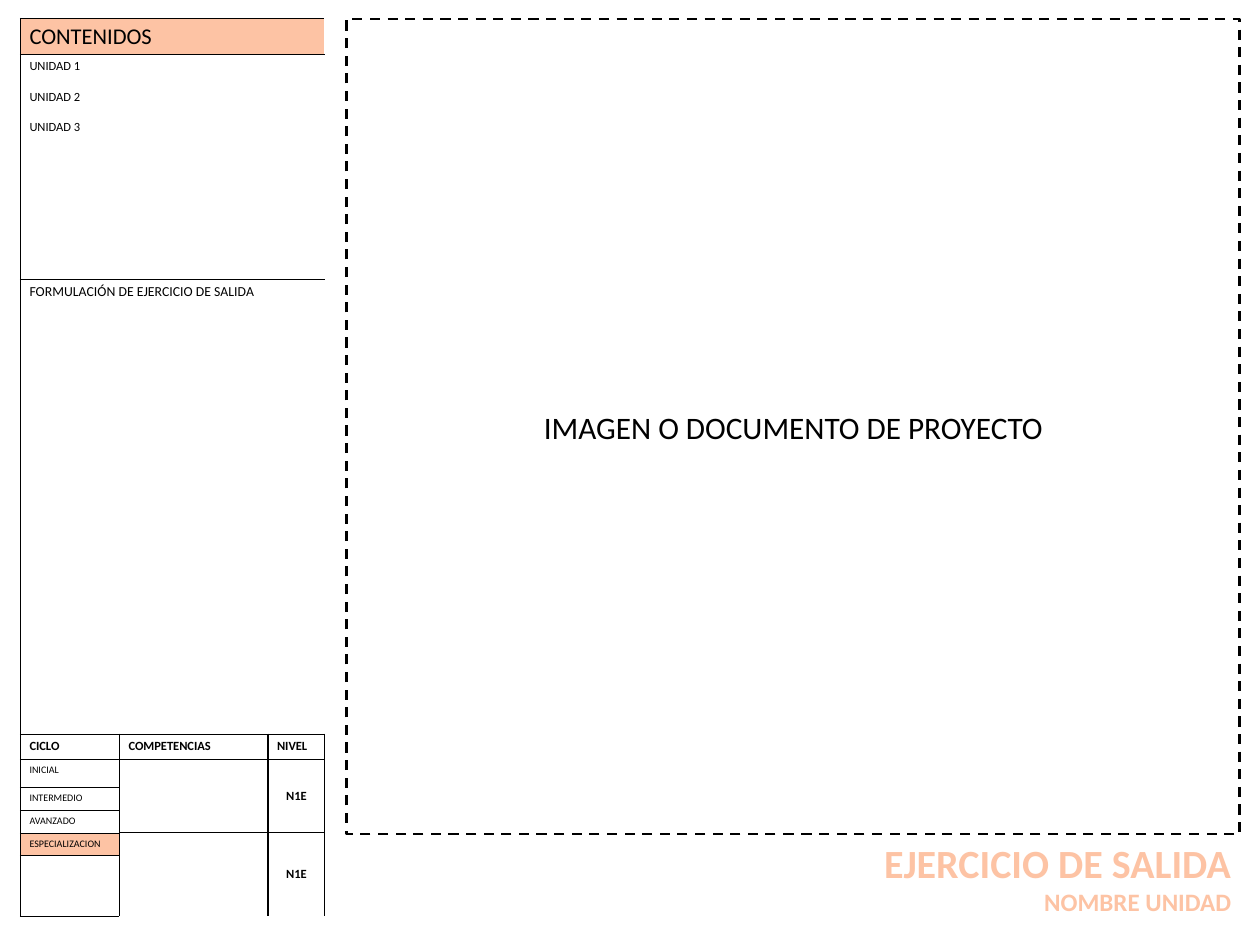
from lxml.etree import SubElement
from pptx import Presentation
from pptx.dml.color import RGBColor
from pptx.enum.dml import MSO_LINE
from pptx.enum.shapes import MSO_SHAPE
from pptx.enum.text import MSO_ANCHOR as Anchor, MSO_AUTO_SIZE as AutoSize, PP_ALIGN as Align
from pptx.oxml.ns import qn
from pptx.util import Pt

COLORS = {"ink": "000000", "accent": "FDC3A4"}
FONT = "Calibri"

COLUMN_WIDTHS = [79.2, 118.8, 45.4]
ROW_HEIGHTS = [28.3, 179.5, 364.2, 20, 22.3, 19, 17.8, 17.8, 49]
# First row, first column, last row, last column
SPANS = [(0, 0, 0, 2), (1, 0, 1, 2), (2, 0, 2, 2),
         (4, 1, 6, 1), (4, 2, 6, 2), (7, 1, 8, 1), (7, 2, 8, 2)]
THIN_BOTTOM_ROWS = {1, 4, 5, 6, 7, 8}
LEVEL = {"size": 10, "bold": True, "align": Align.CENTER, "anchor": Anchor.MIDDLE}
HEADING = {"size": 10, "bold": True}
CELLS = {
    (0, 0): (["CONTENIDOS"], {"size": 18}),
    (1, 0): (["UNIDAD 1", "UNIDAD 2", "UNIDAD 3"], {"size": 10, "space_after": 12}),
    (2, 0): (["FORMULACIÓN DE EJERCICIO DE SALIDA"], {"size": 11}),
    (3, 0): (["CICLO"], HEADING),
    (3, 1): (["COMPETENCIAS"], HEADING),
    (3, 2): (["NIVEL"], HEADING),
    (4, 0): (["INICIAL"], {"size": 8}),
    (4, 2): (["N1E"], LEVEL),
    (5, 0): (["INTERMEDIO"], {"size": 8}),
    (6, 0): (["AVANZADO"], {"size": 8}),
    (7, 0): (["ESPECIALIZACION"], {"size": 8}),
    (7, 2): (["N1E"], LEVEL),
}
FILLED_CELLS = {(0, 0), (7, 0)}


def rgb(name):
    return RGBColor.from_string(COLORS[name])


def add_text(frame, text, first=True, size=10, bold=False, color="ink",
             align=Align.JUSTIFY, space_after=0):
    paragraph = frame.paragraphs[0] if first else frame.add_paragraph()
    paragraph.alignment = align
    paragraph.line_spacing = 1.0
    paragraph.space_before = Pt(0)
    paragraph.space_after = Pt(space_after)
    run = paragraph.add_run()
    run.text = text
    run.font.name = FONT
    run.font.size = Pt(size)
    run.font.bold = bold
    run.font.color.rgb = rgb(color)


def set_border(cell, sides):
    properties = cell._tc.get_or_add_tcPr()
    for position, (side, width) in enumerate(sides.items()):
        line = SubElement(properties, qn(f"a:ln{side}"), w=str(Pt(width)))
        properties.remove(line)
        properties.insert(position, line)  # lines come before the fill
        fill = SubElement(line, qn("a:solidFill"))
        SubElement(fill, qn("a:srgbClr"), val=COLORS["ink"])


def border_sides(row, column):
    """Border widths of one cell, leaving out the inner edges of its span."""
    top, left, bottom, right = next(
        (span for span in SPANS
         if span[0] <= row <= span[2] and span[1] <= column <= span[3]),
        (row, column, row, column))
    thin_rows = THIN_BOTTOM_ROWS if column == 0 or row in (1, 2) else set()
    sides = {}
    if column == left:
        sides["L"] = 1
    if column == right:
        sides["R"] = 1
    if row == top:
        sides["T"] = 0.5 if row - 1 in thin_rows and row != 4 else 1
    if row == bottom:
        sides["B"] = 0.5 if row in thin_rows else 1
    return sides


def add_contents_table(slide, left, top, width, height):
    frame = slide.shapes.add_table(len(ROW_HEIGHTS), len(COLUMN_WIDTHS),
                                   Pt(left), Pt(top), Pt(width), Pt(height))
    table = frame.table
    table.first_row = table.horz_banding = False
    for column, column_width in zip(table.columns, COLUMN_WIDTHS):
        column.width = Pt(column_width)
    for row, row_height in zip(table.rows, ROW_HEIGHTS):
        row.height = Pt(row_height)
    for first_row, first_column, last_row, last_column in SPANS:
        table.cell(first_row, first_column).merge(table.cell(last_row, last_column))

    for row in range(len(ROW_HEIGHTS)):
        for column in range(len(COLUMN_WIDTHS)):
            cell = table.cell(row, column)
            if (row, column) in FILLED_CELLS:
                cell.fill.solid()
                cell.fill.fore_color.rgb = rgb("accent")
            else:
                cell.fill.background()
            set_border(cell, border_sides(row, column))
            lines, text_format = CELLS.get((row, column), ([], {}))
            text_format = dict(text_format)
            cell.vertical_anchor = text_format.pop("anchor", Anchor.TOP)
            for index, line in enumerate(lines):
                add_text(cell.text_frame, line, first=index == 0, **text_format)
            if not lines:  # small type keeps empty cells from growing
                SubElement(cell.text_frame.paragraphs[0]._p, qn("a:endParaRPr"), sz="800")


def add_project_area(slide, left, top, width, height):
    area = slide.shapes.add_shape(MSO_SHAPE.RECTANGLE, Pt(left), Pt(top),
                                  Pt(width), Pt(height))
    area.shadow.inherit = False
    area.fill.background()
    area.line.color.rgb = rgb("ink")
    area.line.width = Pt(2)
    area.line.dash_style = MSO_LINE.DASH
    area.text_frame.vertical_anchor = Anchor.MIDDLE
    add_text(area.text_frame, "IMAGEN O DOCUMENTO DE PROYECTO", size=25, align=Align.CENTER)


def place_title(slide, left, top, width, height):
    title = slide.shapes.title
    title.left, title.top = Pt(left), Pt(top)
    title.width, title.height = Pt(width), Pt(height)
    frame = title.text_frame
    frame.word_wrap = True
    frame.auto_size = AutoSize.SHAPE_TO_FIT_TEXT
    frame.vertical_anchor = Anchor.TOP
    heading = {"bold": True, "color": "accent", "align": Align.RIGHT}
    add_text(frame, "EJERCICIO DE SALIDA", size=32, **heading)
    add_text(frame, "NOMBRE UNIDAD", first=False, size=20, **heading)


def main():
    presentation = Presentation()
    presentation.slide_width, presentation.slide_height = Pt(1008), Pt(756)
    slide = presentation.slides.add_slide(presentation.slide_layouts[5])
    place_title(slide, 548, 667.4, 444.2, 70.6)
    add_project_area(slide, 277.2, 15.1, 714.6, 652.3)
    add_contents_table(slide, 16.4, 14.8, sum(COLUMN_WIDTHS), sum(ROW_HEIGHTS))
    presentation.save("out.pptx")


if __name__ == "__main__":
    main()
